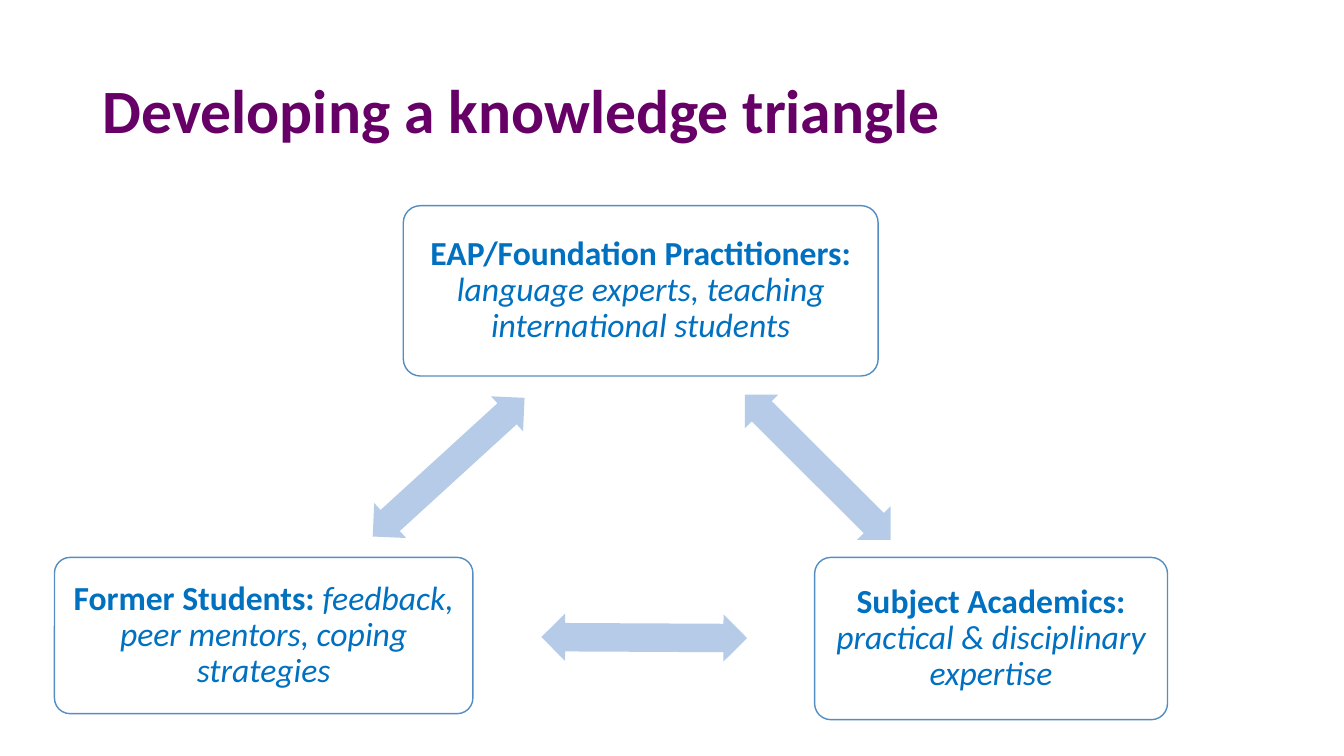
from pptx import Presentation
from pptx.dml.color import RGBColor
from pptx.enum.shapes import MSO_SHAPE
from pptx.enum.text import MSO_ANCHOR, PP_ALIGN
from pptx.util import Inches, Pt

ROUNDED = MSO_SHAPE.ROUNDED_RECTANGLE
DOUBLE_ARROW = MSO_SHAPE.LEFT_RIGHT_ARROW
MIDDLE = MSO_ANCHOR.MIDDLE
LEFT, CENTER = PP_ALIGN.LEFT, PP_ALIGN.CENTER

PURPLE = RGBColor(0x66, 0x00, 0x66)
BLUE = RGBColor(0x00, 0x70, 0xC0)
OUTLINE = RGBColor(0x53, 0x8D, 0xC1)
ARROW_BLUE = RGBColor(0xB5, 0xCB, 0xE7)
WHITE = RGBColor(0xFF, 0xFF, 0xFF)
FONT = "Calibri"

TITLE = "Developing a knowledge triangle"
# group, its contribution, (left, top, width, height)
CORNERS = [
    ("EAP/Foundation Practitioners: ",
     "language experts, teaching international students", (4, 2.04, 4.71, 1.69)),
    ("Subject Academics: ",
     "practical & disciplinary expertise", (8.08, 5.53, 3.5, 1.61)),
    ("Former Students: ",
     "feedback, peer mentors, coping strategies", (0.54, 5.53, 4.15, 1.55)),
]
# left, top, rotation in degrees
ARROWS = [(7.09, 4.4, 44.9), (5.37, 6.09, 180.3), (3.43, 4.4, 317.6)]
ARROW_SIZE = (2.04, 0.47)


def write(box, bold_text, italic_text="", size=24, color=BLUE, align=CENTER, inset=0.1):
    """Fill a box with a bold part followed by an optional italic part."""
    frame = box.text_frame
    frame.word_wrap = True
    frame.vertical_anchor = MIDDLE
    frame.margin_left = frame.margin_right = Inches(inset)
    frame.margin_top = frame.margin_bottom = Inches(inset)
    para = frame.paragraphs[0]
    para.alignment = align
    para.line_spacing = 0.9
    for text, bold in ((bold_text, True), (italic_text, False)):
        if text:
            span = para.add_run()
            span.text = text
            span.font.name = FONT
            span.font.size = Pt(size)
            span.font.bold = bold
            span.font.italic = not bold
            span.font.color.rgb = color


def add_flat_shape(page, kind, place, fill, adjustments):
    shape = page.shapes.add_shape(kind, *map(Inches, place))
    shape.shadow.inherit = False
    shape.fill.solid()
    shape.fill.fore_color.rgb = fill
    for index, value in enumerate(adjustments):
        shape.adjustments[index] = value
    return shape


def main():
    deck = Presentation()
    deck.slide_width, deck.slide_height = Inches(13.33), Inches(7.5)
    page = deck.slides.add_slide(deck.slide_layouts[6])

    title = page.shapes.add_textbox(*map(Inches, (0.92, 0.4, 11.5, 1.45)))
    write(title, TITLE, size=44, color=PURPLE, align=LEFT)

    for group, contribution, place in CORNERS:
        corner = add_flat_shape(page, ROUNDED, place, WHITE, [0.1])
        corner.line.color.rgb = OUTLINE
        corner.line.width = Pt(1)
        write(corner, group, contribution)

    for left, top, rotation in ARROWS:
        arrow = add_flat_shape(page, DOUBLE_ARROW, (left, top, *ARROW_SIZE),
                               ARROW_BLUE, [0.6, 0.5])
        arrow.line.fill.background()
        arrow.rotation = rotation

    deck.save("out.pptx")


if __name__ == "__main__":
    main()
